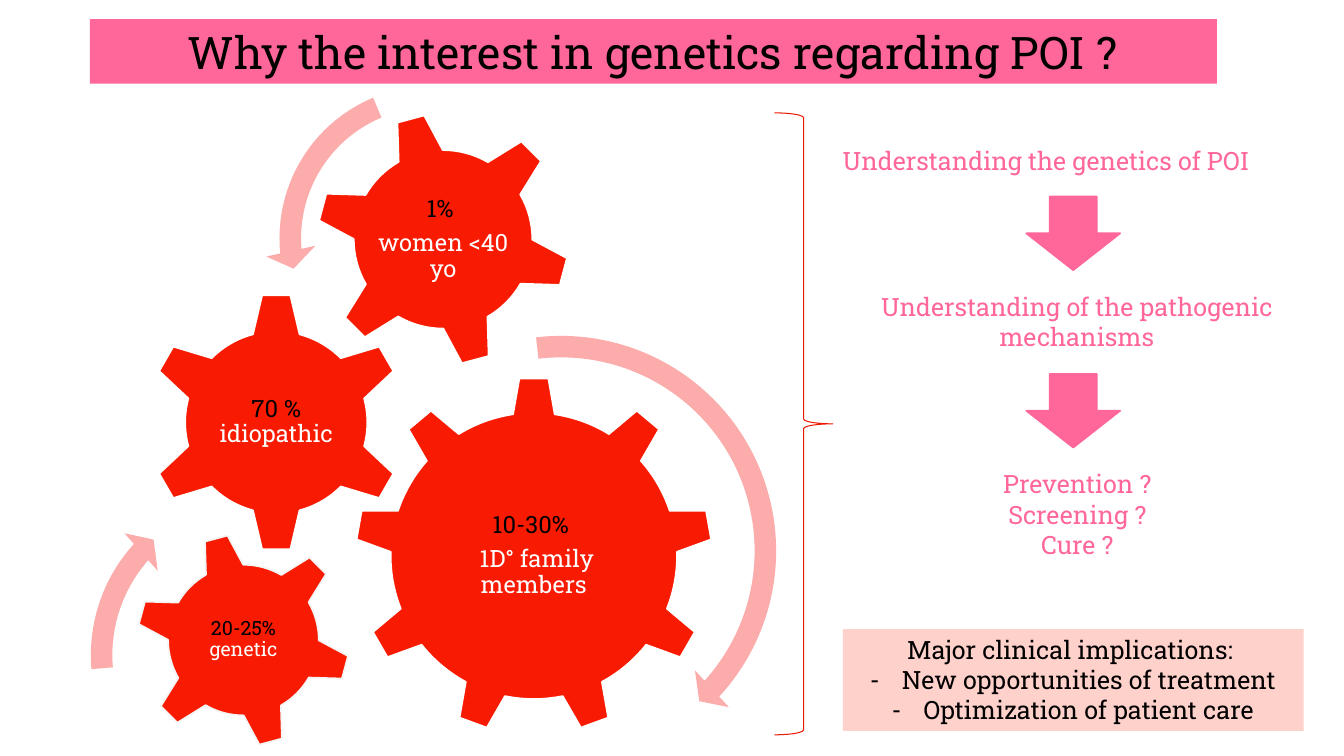
"""Build the slide on genetics and POI."""
from dataclasses import dataclass

from lxml import etree
from pptx import Presentation
from pptx.dml.color import RGBColor
from pptx.enum.shapes import MSO_SHAPE
from pptx.enum.text import MSO_ANCHOR, MSO_AUTO_SIZE, PP_ALIGN
from pptx.oxml.ns import qn
from pptx.util import Inches, Pt

RECTANGLE, BRACE, DOWN = MSO_SHAPE.RECTANGLE, MSO_SHAPE.RIGHT_BRACE, MSO_SHAPE.DOWN_ARROW
GEAR_SIX, GEAR_NINE = MSO_SHAPE.GEAR_6, MSO_SHAPE.GEAR_9
TURN, TURN_LEFT = MSO_SHAPE.CIRCULAR_ARROW, MSO_SHAPE.LEFT_CIRCULAR_ARROW
TOP, MIDDLE = MSO_ANCHOR.TOP, MSO_ANCHOR.MIDDLE
LEFT, CENTER = PP_ALIGN.LEFT, PP_ALIGN.CENTER
FIXED = MSO_AUTO_SIZE.NONE
CELL = Inches(0.1)


@dataclass(frozen=True)
class Theme:
    """Colours, font and type sizes of the slide."""

    font: str = "Roboto Slab"
    pink: str = "FF6699"
    red: str = "F81B02"
    brace: str = "ED1A02"
    blush: str = "FBACAB"
    panel: str = "FFD1CB"
    black: str = "000000"
    white: str = "FFFFFF"
    pale: str = "F4F4F4"
    title: int = 32
    body: int = 18
    gear: int = 17
    small: int = 14


THEME = Theme()

GEARS = [
    (GEAR_NINE, 52.95, 55.15, 35.5, 0, 21.3, THEME.gear, THEME.white,
     [["10-30% "], [" 1D° family members"]]),
    (GEAR_SIX, 27.4, 41.9, 25.8, 0, 12.8, THEME.gear, THEME.white,
     [["70 % ", "idiopathic"]]),
    (GEAR_SIX, 43.95, 23.75, 25.3, 345, 14.2, THEME.gear, THEME.white,
     [["1% "], ["women <40 yo"]]),
    (GEAR_SIX, 24.15, 63.5, 21.35, 345, 12, THEME.small, THEME.pale,
     [["20-25% ", "genetic"]]),
]

TURNS = [
    (TURN, 32.9, 31.9, 45.5, (0.04687, 2.99029, 25.46093, 157.98162, 0.05469)),
    (TURN_LEFT, 26.3, 7.1, 33.1, (0.06452, 4.29999, 104.89124, 148.37806, 0.07527)),
    (TURN, 7.6, 47.2, 35.6, (0.05984, 3.94124, 133.13824, 105.08221, 0.06981)),
]

STEPS = [
    (82.6, 13.9, 45.8, 4, LEFT, False, ["Understanding the genetics of POI"]),
    (86.2, 28.4, 41.2, 7.1, CENTER, True, ["Understanding of the pathogenic mechanisms"]),
    (97.7, 46, 18.3, 10.1, CENTER, False, ["Prevention ?", "Screening ?", "Cure ?"]),
]


def grid(*cells):
    """Turn grid columns and rows into lengths."""
    return [round(cell * CELL) for cell in cells]


def apply(target, formats):
    """Set each attribute named in a dict of formats."""
    for name, value in formats.items():
        setattr(target, name, value)


def place(box, *cells):
    """Move a box to a column, row, width and height."""
    apply(box, dict(zip(("left", "top", "width", "height"), grid(*cells))))


def paint(box, color):
    """Fill a box with one colour."""
    box.fill.solid()
    box.fill.fore_color.rgb = RGBColor.from_string(color)


def draw(page, kind, cells, fill=None, line=None, weight=1.25):
    """Add a preset shape with its fill and outline."""
    shape = page.shapes.add_shape(kind, *grid(*cells))
    shape.shadow.inherit = False
    if fill:
        paint(shape, fill)
    else:
        shape.fill.background()
    if line:
        shape.line.color.rgb = RGBColor.from_string(line)
        shape.line.width = Pt(weight)
    else:
        shape.line.fill.background()
    return shape


def write(box, paras, size, frame=None, **formats):
    """Write paragraphs, each a list of (text, colour) spans."""
    body = box.text_frame
    apply(body, {"auto_size": FIXED, "vertical_anchor": TOP, "word_wrap": True, **(frame or {})})
    for index, spans in enumerate(paras):
        para = body.add_paragraph() if index else body.paragraphs[0]
        apply(para, {"alignment": CENTER, "space_before": Pt(0), **formats})
        for text, color in spans:
            span = para.add_run()
            span.text = text
            apply(span.font, {"name": THEME.font, "size": Pt(size)})
            span.font.color.rgb = RGBColor.from_string(color)


def set_bullet(para, mark=None):
    """Give a paragraph a hanging bullet, or none."""
    indent = Inches(0.31) if mark else 0
    props = para._p.get_or_add_pPr()
    props.set("marL", str(indent))
    props.set("indent", str(-indent))
    bullet = etree.SubElement(props, qn("a:buChar" if mark else "a:buNone"))
    if mark:
        bullet.set("char", mark)


def add_gear(page, kind, column, row, size, angle, label, points, edge, paras):
    """Add a gear around a centre, with its label in the middle."""
    gear = draw(page, kind, (column - size / 2, row - size / 2, size, size), THEME.red, edge)
    gear.rotation = angle
    box = page.shapes.add_textbox(*grid(column - label / 2, row - label / 2, label, label))
    margins = {f"margin_{side}": Inches(0.02) for side in ("left", "right", "top", "bottom")}
    texts = [text for spans in paras for text in spans]
    colored = [[(text, THEME.black if text == texts[0] else THEME.white) for text in spans]
               for spans in paras]
    write(box, colored, points, {"vertical_anchor": MIDDLE, **margins},
          line_spacing=0.9, space_after=Pt(6))


def add_turn(page, kind, column, row, size, bends):
    """Add a curved arrow that shows how a gear turns."""
    arrow = draw(page, kind, (column, row, size, size), THEME.blush)
    for index, bend in enumerate(bends):
        arrow.adjustments[index] = bend


def add_step(page, column, row, width, height, align, wrap, lines):
    """Add one step of the reasoning on the right."""
    box = page.shapes.add_textbox(*grid(column, row, width, height))
    write(box, [[(line, THEME.pink)] for line in lines], THEME.body,
          {"word_wrap": wrap}, alignment=align)


def fill_title(box):
    """Format the title placeholder as a pink band."""
    place(box, 8.9, 1.9, 111.8, 6.4)
    paint(box, THEME.pink)
    write(box, [[("Why the interest in genetics regarding POI ?", THEME.black)]],
          THEME.title, {"vertical_anchor": MIDDLE})


def fill_implications(box):
    """Format the body placeholder as the list of implications."""
    place(box, 83.6, 62.4, 45.7, 10.1)
    paint(box, THEME.panel)
    lines = ["Major clinical implications: ", "New opportunities of treatment",
             "Optimization of patient care"]
    write(box, [[(line, THEME.black)] for line in lines], THEME.body, {"word_wrap": False})
    for index, para in enumerate(box.text_frame.paragraphs):
        set_bullet(para, "-" if index else None)


def main():
    """Build and save the deck."""
    deck = Presentation()
    apply(deck, {"slide_width": Inches(13.33), "slide_height": Inches(7.5)})
    page = deck.slides.add_slide(deck.slide_layouts[1])
    fill_title(page.shapes.title)
    fill_implications(page.placeholders[1])
    for gear in GEARS:
        add_gear(page, *gear)
    for turn in TURNS:
        add_turn(page, *turn)
    draw(page, BRACE, (76.8, 11.2, 5.8, 61.7), line=THEME.brace, weight=0.75)
    for step in STEPS:
        add_step(page, *step)
    for index in range(len(STEPS) - 1):
        draw(page, DOWN, (101.8, 19.5 + 17.6 * index, 9.3, 7.3), THEME.pink, THEME.pink)
    deck.save("out.pptx")


if __name__ == "__main__":
    main()
